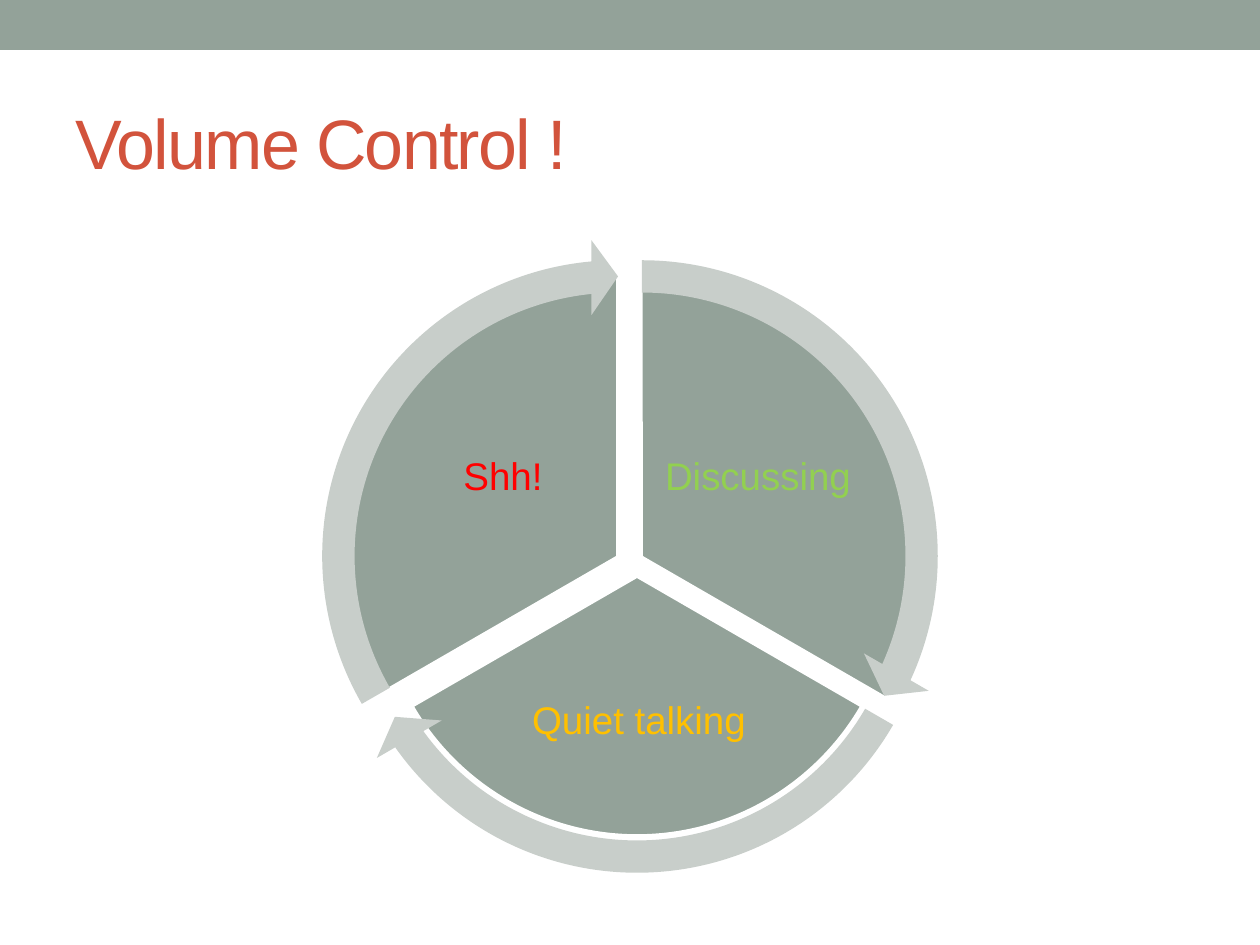
import pptx
import pptx.util
import pptx.dml.color
import pptx.enum.shapes
import pptx.enum.text

KIND = pptx.enum.shapes.MSO_SHAPE
ALIGN = pptx.enum.text.PP_ALIGN
MID = pptx.enum.text.MSO_ANCHOR.MIDDLE
SCALE = 914400 / 126
SAGE, PALE, WHITE, RUST = "93A299", "C8CECA", "FFFFFF", "D2533C"


def px(num):
    return pptx.util.Emu(round(num * SCALE))


def rgb(code):
    return pptx.dml.color.RGBColor.from_string(code)


def add_form(host, kind, box, fill, angles=(), line=None):
    form = host.add_shape(kind, *map(px, box))
    form.shadow.inherit = False
    for spot, angle in enumerate(angles):
        form.adjustments[spot] = angle
    form.fill.solid()
    form.fill.fore_color.rgb = rgb(fill)
    if line:
        form.line.color.rgb = rgb(line)
        form.line.width = pptx.util.Pt(2.08)
    else:
        form.line.fill.background()


def add_run(para, text, size, code):
    run = para.add_run()
    run.text = text
    run.font.name = "Arial"
    run.font.size = pptx.util.Pt(size)
    run.font.color.rgb = rgb(code)
    return run


def add_label(host, box, text, code):
    frame = host.add_textbox(*map(px, box)).text_frame
    frame.word_wrap = True
    frame.vertical_anchor = MID
    frame.margin_left = frame.margin_right = px(4)
    frame.margin_top = frame.margin_bottom = px(4)
    para = frame.paragraphs[0]
    para.alignment = ALIGN.CENTER
    para.line_spacing = 0.9
    add_run(para, text, 22, code)


def set_title(slide, text):
    title = slide.shapes.title
    title.left, title.top, title.width, title.height = map(
        px, (63, 73, 1134, 136))
    frame = title.text_frame
    frame.word_wrap = True
    frame.vertical_anchor = MID
    para = frame.paragraphs[0]
    para.alignment = ALIGN.LEFT
    run = add_run(para, text, 40, RUST)
    run.font._element.set("spc", "-100")


def add_cycle(slide):
    group = slide.shapes.add_group_shape().shapes

    # Slices: left, top, size, angles, label box, label, label colour
    slices = [
        (359, 275, 564, (162, 18), (657, 394, 202, 168),
         "Discussing", "92D050"),
        (377, 316, 520, (18, 90), (500, 654, 278, 136),
         "Quiet talking", "FFC000"),
        (336, 275, 564, (90, 162), (402, 394, 202, 168),
         "Shh!", "FF0000"),
    ]
    for left, top, size, angles, box, text, code in slices:
        add_form(group, KIND.PIE, (left, top, size, size), SAGE,
                 angles, WHITE)
        add_label(group, box, text, code)

    # Arrows around the slices: left, top, end angle, start angle
    arrows = [
        (325, 239, 14.725, 161.994),
        (320, 260, 86.72, 18.005),
        (301, 239, 158.73, 90),
    ]
    for left, top, end, start in arrows:
        add_form(group, KIND.CIRCULAR_ARROW, (left, top, 634, 634), PALE,
                 (0.051, 3.275, end, start, 0.059))


def main():
    deck = pptx.Presentation()
    deck.slide_width, deck.slide_height = px(1260), px(945)
    slide = deck.slides.add_slide(deck.slide_layouts[5])

    # Top band and heading
    add_form(slide.shapes, KIND.RECTANGLE, (0, 0, 1260, 50), SAGE)
    set_title(slide, "Volume Control !")

    # Volume cycle
    add_cycle(slide)
    deck.save("out.pptx")


if __name__ == "__main__":
    main()
